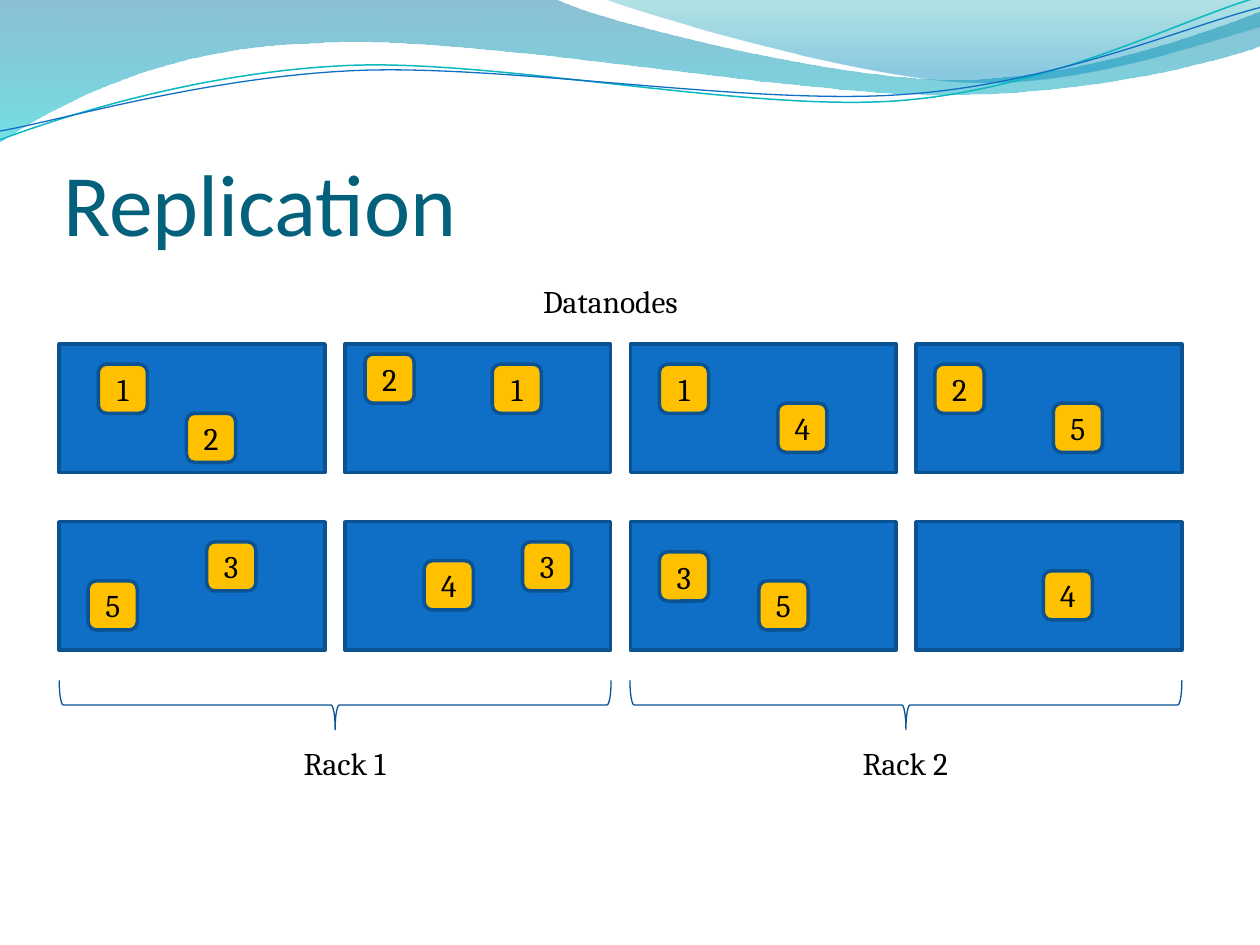
import lxml.etree
import pptx
import pptx.dml.color
import pptx.enum.shapes
import pptx.enum.text
import pptx.oxml.ns
import pptx.util

Inches = pptx.util.Inches
Pt = pptx.util.Pt
RGBColor = pptx.dml.color.RGBColor
Shapes = pptx.enum.shapes.MSO_SHAPE
Anchor = pptx.enum.text.MSO_ANCHOR
Align = pptx.enum.text.PP_ALIGN
qn = pptx.oxml.ns.qn

TITLE_TEAL = RGBColor(0x04, 0x61, 0x7B)
NODE_BLUE = RGBColor(0x0F, 0x6F, 0xC6)
OUTLINE_BLUE = RGBColor(0x0B, 0x52, 0x92)
BRACE_BLUE = RGBColor(0x09, 0x52, 0x95)
BLOCK_YELLOW = RGBColor(0xFF, 0xC0, 0x00)
TEAL_LINE = RGBColor(0x0A, 0xB8, 0xBF)
BLACK = RGBColor(0, 0, 0)
DEEP_BLUE = RGBColor(0x00, 0x74, 0xA1)
TURQUOISE = RGBColor(0x00, 0xC6, 0xCF)
SEA_GREEN = RGBColor(0x00, 0xA1, 0xA9)
SKY_BLUE = RGBColor(0x00, 0x8B, 0xBF)

LARGE_WAVE = [
    (0, 0), [(4.4, -0.01)],
    [(4.76, 0.17), (6.64, 0.63), (7.58, 0.63)],
    [(8.53, 0.63), (9.58, 0.26), (10, 0.09)], [(10.01, 0.36)],
    [(9.83, 0.44), (8.7, 0.76), (7.46, 0.75)],
    [(6.22, 0.75), (3.82, 0.28), (2.57, 0.34)],
    [(1.29, 0.36), (0.46, 0.83), (-0.01, 1.13)], [(0, 0)],
]
SMALL_WAVE = [
    (4.79, -0.01),
    [(5.09, 0.11), (6.82, 0.62), (7.69, 0.65)],
    [(8.56, 0.69), (9.61, 0.32), (10, 0.21)],
    [(10, 0)], [(4.79, -0.01)],
]
TEAL_CURVE = [
    (0, 1.11),
    [(0.48, 0.93), (1.58, 0.57), (2.77, 0.52)],
    [(3.95, 0.47), (5.93, 0.89), (7.13, 0.8)],
    [(8.33, 0.71), (9.38, 0.15), (9.98, -0.02)],
]
BLUE_CURVE = [
    (0, 1.04),
    [(0.47, 0.96), (1.64, 0.61), (2.83, 0.56)],
    [(4.03, 0.51), (5.97, 0.84), (7.17, 0.75)],
    [(8.36, 0.67), (9.41, 0.21), (10, 0.06)],
]

DATANODE_ROWS = [
    [
        [("1", 0.31, 0.16), ("2", 1.01, 0.55)],
        [("2", 0.16, 0.08), ("1", 1.17, 0.16)],
        [("1", 0.23, 0.16), ("4", 1.17, 0.47)],
        [("2", 0.15, 0.16), ("5", 1.09, 0.47)],
    ],
    [
        [("5", 0.23, 0.47), ("3", 1.17, 0.16)],
        [("4", 0.63, 0.31), ("3", 1.41, 0.16)],
        [("3", 0.23, 0.24), ("5", 1.02, 0.47)],
        [("4", 1.01, 0.39)],
    ],
]


def add_outline(slide, left, top, outline, close):
    start, *segments = outline

    def place(point):
        return left + Inches(point[0]), top + Inches(point[1])

    builder = slide.shapes.build_freeform(*place(start), scale=1.0)
    points = [place(point) for segment in segments for point in segment]
    builder.add_line_segments(points, close=close)
    shape = builder.convert_to_shape()
    shape.shadow.inherit = False
    line_elements = iter(shape.element.findall(".//" + qn("a:lnTo")))
    for segment in segments:
        elements = [next(line_elements) for _ in segment]
        if len(elements) == 3:
            curve = lxml.etree.Element(qn("a:cubicBezTo"))
            elements[0].addprevious(curve)
            for element in elements:
                curve.append(element[0])
                element.getparent().remove(element)
    return shape


def add_wave(slide, left, top, outline, stops):
    shape = add_outline(slide, left, top, outline, True)
    shape.line.fill.background()
    shape.fill.gradient()
    shape.fill.gradient_angle = 270
    for stop, (position, color, opacity) in zip(shape.fill.gradient_stops, stops):
        stop.position = position
        stop.color.rgb = color
    color_elements = shape.element.findall(".//" + qn("a:gs") + "/" + qn("a:srgbClr"))
    for element, (_, _, opacity) in zip(color_elements, stops):
        alpha = lxml.etree.SubElement(element, qn("a:alpha"))
        alpha.set("val", str(opacity * 1000))


def add_curve(slide, left, top, outline, color, width):
    shape = add_outline(slide, left, top, outline, False)
    shape.fill.background()
    shape.line.color.rgb = color
    shape.line.width = Pt(width)


def add_header_waves(slide, left, top):
    add_wave(slide, left, top, LARGE_WAVE, [(0, DEEP_BLUE, 45), (1, TURQUOISE, 55)])
    add_wave(slide, left, top, SMALL_WAVE, [(0, SEA_GREEN, 30), (0.8, SKY_BLUE, 45)])
    add_curve(slide, left, top, TEAL_CURVE, TEAL_LINE, 0.85)
    add_curve(slide, left, top, BLUE_CURVE, NODE_BLUE, 0.75)


def write_run(paragraph, text, size, font, color, alignment):
    paragraph.alignment = alignment
    run = paragraph.add_run()
    run.text = text
    run.font.size = Pt(size)
    run.font.name = font
    run.font.color.rgb = color


def add_title(slide, left, top, width, height):
    title = slide.shapes.title
    title.left, title.top, title.width, title.height = left, top, width, height
    frame = title.text_frame
    frame.vertical_anchor = Anchor.BOTTOM
    frame.margin_left = frame.margin_right = frame.margin_bottom = 0
    frame.margin_top = Inches(0.05)
    write_run(frame.paragraphs[0], "Replication", 50, "Calibri", TITLE_TEAL, Align.LEFT)


def add_label(slide, left, top, width, height, text):
    frame = slide.shapes.add_textbox(left, top, width, height).text_frame
    frame.word_wrap = True
    write_run(frame.paragraphs[0], text, 18, "Cambria", BLACK, Align.CENTER)


def add_filled_shape(slide, kind, left, top, width, height, color):
    shape = slide.shapes.add_shape(kind, left, top, width, height)
    shape.shadow.inherit = False
    shape.fill.solid()
    shape.fill.fore_color.rgb = color
    shape.line.color.rgb = OUTLINE_BLUE
    shape.line.width = Pt(2)
    return shape


def add_datanode(slide, left, top, width, height, blocks):
    add_filled_shape(slide, Shapes.RECTANGLE, left, top, width, height, NODE_BLUE)
    side = Inches(0.39)
    for number, x, y in blocks:
        block = add_filled_shape(slide, Shapes.ROUNDED_RECTANGLE, left + Inches(x),
                                 top + Inches(y), side, side, BLOCK_YELLOW)
        frame = block.text_frame
        frame.vertical_anchor = Anchor.MIDDLE
        write_run(frame.paragraphs[0], number, 18, "Cambria", BLACK, Align.CENTER)


def add_datanode_grid(slide, left, top, width, height):
    node_width, node_height = Inches(2.11), Inches(1.02)
    column_step = (width - node_width) // (len(DATANODE_ROWS[0]) - 1)
    row_step = (height - node_height) // (len(DATANODE_ROWS) - 1)
    for row, nodes in enumerate(DATANODE_ROWS):
        for column, blocks in enumerate(nodes):
            add_datanode(slide, left + column * column_step, top + row * row_step,
                         node_width, node_height, blocks)


def add_rack(slide, left, top, width, height, text, label_left):
    brace = slide.shapes.add_shape(
        Shapes.LEFT_BRACE, left + (width - height) // 2,
        top + (height - width) // 2, height, width)
    brace.rotation = 270
    brace.shadow.inherit = False
    brace.fill.background()
    brace.line.color.rgb = BRACE_BLUE
    brace.line.width = Pt(0.75)
    add_label(slide, label_left, top + Inches(0.46), Inches(2.81), Inches(0.4), text)


def main():
    presentation = pptx.Presentation()
    presentation.slide_width = Inches(10)
    presentation.slide_height = Inches(7.5)
    slide = presentation.slides.add_slide(presentation.slide_layouts[5])
    add_header_waves(slide, Inches(0), Inches(0))
    add_title(slide, Inches(0.5), Inches(0.77), Inches(9), Inches(1.25))
    add_label(slide, Inches(3.44), Inches(2.19), Inches(2.81), Inches(0.4), "Datanodes")
    add_datanode_grid(slide, Inches(0.47), Inches(2.73), Inches(8.91), Inches(2.43))
    for text, left, label_left in [("Rack 1", 0.47, 1.33), ("Rack 2", 5, 5.78)]:
        add_rack(slide, Inches(left), Inches(5.4), Inches(4.38), Inches(0.39),
                 text, Inches(label_left))
    presentation.save("out.pptx")


if __name__ == "__main__":
    main()
